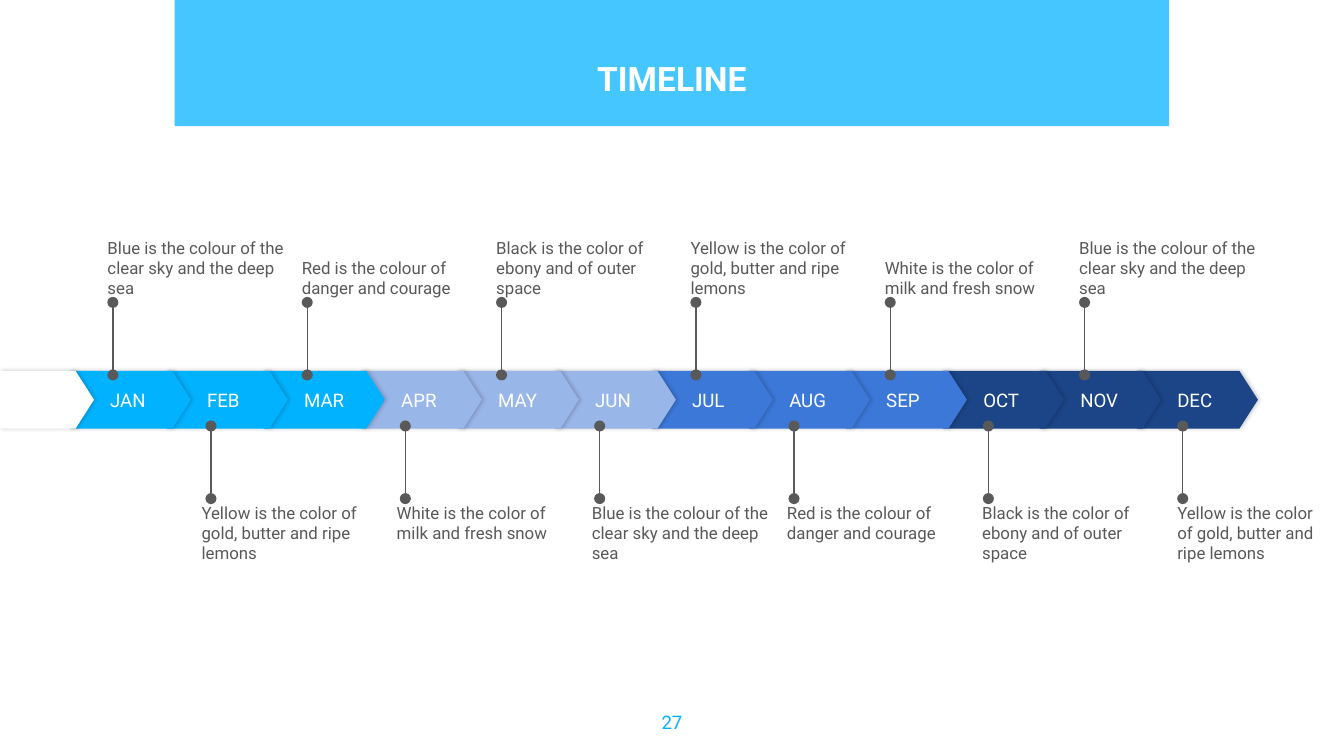
from lxml.etree import SubElement as Sub
from pptx import Presentation
from pptx.dml.color import RGBColor
from pptx.enum.shapes import MSO_CONNECTOR as Link, MSO_SHAPE as Kind
from pptx.enum.text import MSO_ANCHOR as Anchor, MSO_AUTO_SIZE as Fit, PP_ALIGN as Align
from pptx.oxml.ns import qn
from pptx.util import Inches, Pt

WHITE = RGBColor(0xFF, 0xFF, 0xFF)
SKY = RGBColor(0x00, 0xB2, 0xFF)
PALE = RGBColor(0x99, 0xB6, 0xE9)
BLUE = RGBColor(0x3C, 0x78, 0xD8)
NAVY = RGBColor(0x1C, 0x45, 0x87)
GREY = RGBColor(0x59, 0x59, 0x59)
FONT = "Roboto"

MONTHS = ["JAN", "FEB", "MAR", "APR", "MAY", "JUN",
          "JUL", "AUG", "SEP", "OCT", "NOV", "DEC"]
TINTS = [SKY, PALE, BLUE, NAVY]
SEA = "Blue is the colour of the clear sky and the deep sea"
RISK = "Red is the colour of danger and courage"
SPACE = "Black is the color of ebony and of outer space"
GOLD = "Yellow is the color of gold, butter and ripe lemons"
MILK = "White is the color of milk and fresh snow"
ABOVE = [SEA, RISK, SPACE, GOLD, MILK, SEA]
BELOW = [GOLD, MILK, SEA, RISK, SPACE, GOLD]
START = 0.52
PITCH = 7.94 / 11
STEP = 7.23 / 5
TOP = 2.76


def write(shape, text, size, color, align=Align.LEFT, anchor=Anchor.TOP,
          pads=(0, 0, 0, 0), bold=False):
    """Put one formatted paragraph into a shape."""
    frame = shape.text_frame
    frame.text = text
    frame.word_wrap = True
    frame.auto_size = Fit.NONE
    frame.vertical_anchor = anchor
    (frame.margin_left, frame.margin_top,
     frame.margin_right, frame.margin_bottom) = map(Inches, pads)
    line = frame.paragraphs[0]
    line.alignment = align
    font = line.runs[0].font
    font.name, font.size, font.bold = FONT, Pt(size), bold
    font.color.rgb = color


def add_block(slide, kind, box, color):
    """Add a plain filled shape without outline or shadow."""
    shape = slide.shapes.add_shape(kind, *map(Inches, box))
    shape.shadow.inherit = False
    shape.fill.solid()
    shape.fill.fore_color.rgb = color
    shape.line.fill.background()
    return shape


def fade(node, value):
    """Set the opacity of a colour node in percent."""
    Sub(node, qn("a:alpha"), val=str(value * 1000))


def add_text(slide, box, *args, **style):
    """Add a text box with one paragraph."""
    write(slide.shapes.add_textbox(*map(Inches, box)), *args, **style)


def add_title(slide, text):
    """Place the title over its translucent banner."""
    title = slide.shapes.title
    banner = add_block(slide, Kind.RECTANGLE, (1.3, 0, 7.4, 0.94), SKY)
    fade(banner.element.spPr.find(".//" + qn("a:srgbClr")), 73)
    title.element.addprevious(banner.element)
    title.left, title.top, title.width, title.height = map(
        Inches, (1.3, 0.33, 7.4, 0.55))
    write(title, text, 18, WHITE, Align.CENTER, pads=(0.1,) * 4, bold=True)


def add_arrow(slide, left, width, color):
    """Add one pentagon of the band with its soft shadow."""
    arrow = add_block(slide, Kind.PENTAGON, (left, TOP, width, 0.43), color)
    arrow.adjustments[0] = 0.32
    glow = Sub(arrow.element.spPr.find(qn("a:effectLst")), qn("a:outerShdw"),
               blurRad=str(Pt(2.2)), dist=str(Pt(0.8)), dir="0",
               algn="bl", rotWithShape="0")
    fade(Sub(glow, qn("a:srgbClr"), val="000000"), 20)
    return arrow


def add_band(slide):
    """Stack the months from last to first, then the blank start."""
    for i, month in reversed(list(enumerate(MONTHS))):
        arrow = add_arrow(slide, START + i * PITCH, 0.9, TINTS[i // 3])
        write(arrow, month, 10, WHITE, anchor=Anchor.MIDDLE, pads=(0.3, 0, 0, 0))
    add_arrow(slide, 0, 0.7, WHITE)


def add_stem(slide, x, start, end):
    """Add a vertical line with a dot at each end."""
    stem = slide.shapes.add_connector(
        Link.STRAIGHT, *map(Inches, (x, start, x, end)))
    stem.line.color.rgb = GREY
    stem.line.width = Pt(0.75)
    props = stem.element.spPr
    for tag in ("a:headEnd", "a:tailEnd"):
        Sub(props.find(qn("a:ln")), qn(tag), type="oval")
    Sub(props, qn("a:effectLst"))


def add_notes(slide):
    """Hang the notes above odd months and below even ones."""
    for i, text in enumerate(ABOVE):
        x = 0.84 + i * STEP
        add_stem(slide, x, 2.79, 2.25)
        add_text(slide, (x - 0.04, 1.64, 1.37, 0.58), text, 9, GREY,
                 anchor=Anchor.BOTTOM)
    for i, text in enumerate(BELOW):
        add_stem(slide, 1.57 + i * STEP, 3.71, 3.17)
        left = 1.5 + i * 7.26 / 5
        width = min(1.37, 9.89 - left)
        add_text(slide, (left, 3.74, width, 0.58), text, 9, GREY)


def main():
    """Build the timeline slide."""
    deck = Presentation()
    deck.slide_width, deck.slide_height = Inches(10), Inches(10 * 9 / 16)
    slide = deck.slides.add_slide(deck.slide_layouts[5])
    add_title(slide, "TIMELINE")
    add_text(slide, (4.7, 5.19, 0.6, 0.43), "27", 10, SKY,
             align=Align.CENTER, pads=(0.1,) * 4)
    add_band(slide)
    add_notes(slide)
    deck.save("out.pptx")


if __name__ == "__main__":
    main()
